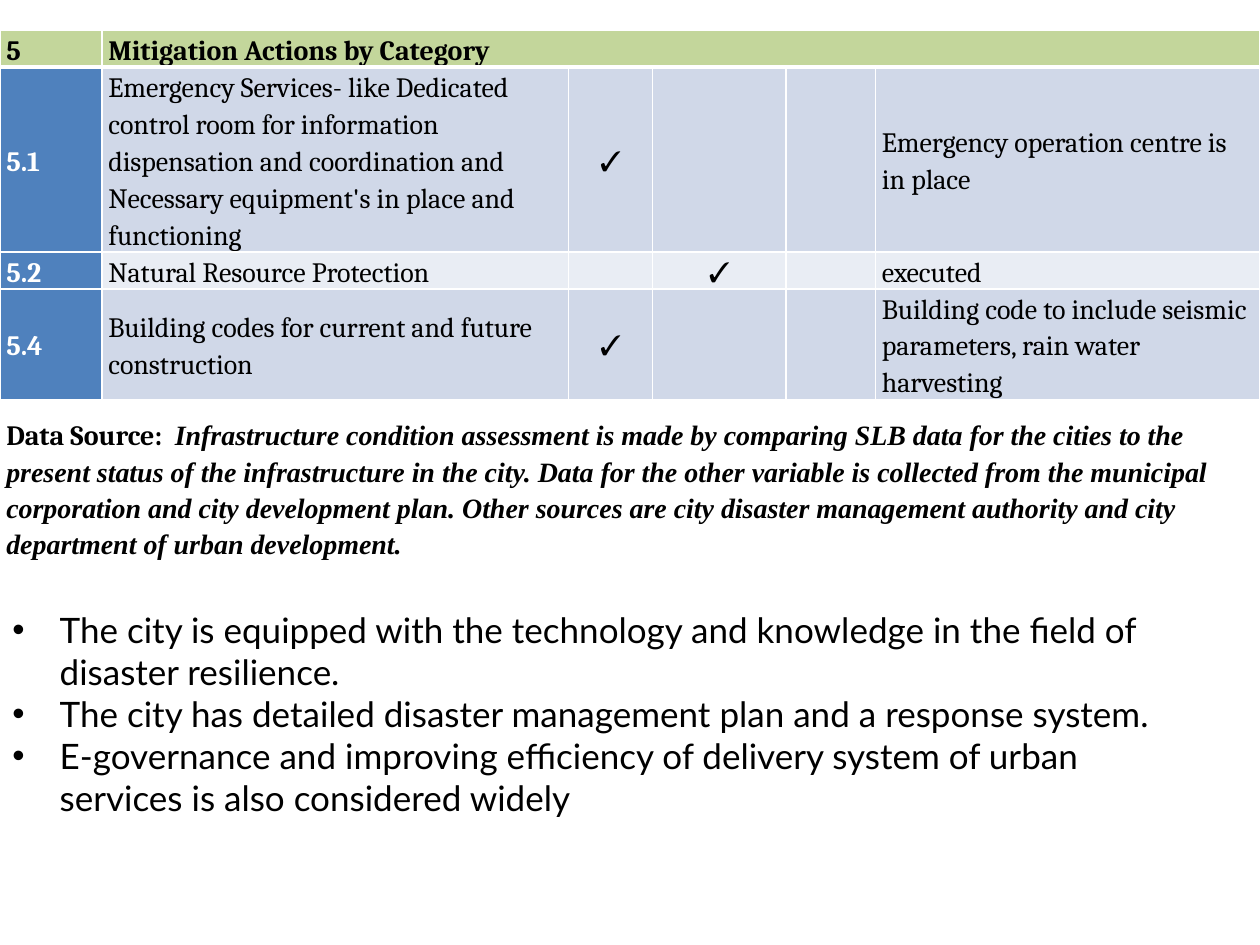
from lxml.etree import SubElement
from pptx import Presentation
from pptx.dml.color import RGBColor
from pptx.enum.text import MSO_ANCHOR, PP_ALIGN
from pptx.oxml.ns import qn
from pptx.util import Pt


class Theme:
    head = RGBColor.from_string("C3D69B")
    key = RGBColor.from_string("4F81BD")
    dark = RGBColor.from_string("D0D8E8")
    light = RGBColor.from_string("E9EDF4")
    white = RGBColor.from_string("FFFFFF")
    black = RGBColor.from_string("000000")
    serif, quote, sans = "Cambria", "Times New Roman", "Lato"
    cell, list = Pt(16), Pt(20)


def style(para, face, size, color, bold=False):
    font = para.font
    font.name, font.size, font.bold = face, size, bold
    font.color.rgb = color


def edge(cell, side, width):
    line = SubElement(cell._tc.get_or_add_tcPr(), qn("a:" + side), w=str(Pt(width)))
    fill = SubElement(line, qn("a:solidFill"))
    SubElement(fill, qn("a:srgbClr"), val=str(Theme.white))


deck = Presentation()
deck.slide_width, deck.slide_height = Pt(720), Pt(540)
slide = deck.slides.add_slide(deck.slide_layouts[6])

# Table content: one list per row, lines within a cell split by \n
tick = "✓"
rows = [
    ["5", "Mitigation Actions by Category", "", "", "", ""],
    ["5.1", "Emergency Services- like Dedicated control room for information "
     "dispensation and coordination and\n"
     "Necessary equipment's in place and functioning",
     tick, "", "", "Emergency operation centre is in place"],
    ["5.2", "Natural Resource Protection", "", tick, "", "executed"],
    ["5.4", "Building codes for current and future construction",
     tick, "", "", "Building code to include seismic parameters, rain water harvesting"],
    ["", "", "", "", "", ""],
]
source = [
    ("Data Source:  ", Theme.serif, False),
    ("Infrastructure condition assessment is made by comparing SLB data for the "
     "cities to the present status of the infrastructure in the city. Data for the "
     "other variable is collected from the municipal corporation and city "
     "development plan. Other sources are city disaster management authority and "
     "city department of urban development.", Theme.quote, True),
]
widths = [58.3, 266.5, 48.2, 76.3, 51.1, 219.6]
heights = [18.7, 98.6, 18.7, 58.3, 100.8]
last = len(rows) - 1

# Table frame
table = slide.shapes.add_table(len(rows), len(widths), Pt(0), Pt(17.2),
                               Pt(720), Pt(sum(heights))).table
table.first_row = table.horz_banding = False
for col, width in zip(table.columns, widths):
    col.width = Pt(width)
for row, height in zip(table.rows, heights):
    row.height = Pt(height)
table.cell(0, 1).merge(table.cell(0, 5))
table.cell(last, 0).merge(table.cell(last, 5))

# Table cells
for r, row in enumerate(rows):
    for c, text in enumerate(row):
        cell = table.cell(r, c)
        cell.vertical_anchor = MSO_ANCHOR.MIDDLE
        cell.margin_left = cell.margin_right = Pt(3.6)
        cell.margin_top = cell.margin_bottom = Pt(0)
        for side in ("lnL", "lnR", "lnT", "lnB"):
            thick = (r, side) in ((0, "lnB"), (1, "lnT"))
            edge(cell, side, 3 if thick else 1)
        if r == last:
            cell.fill.background()
        else:
            cell.fill.solid()
            band = Theme.dark if r % 2 else Theme.light
            cell.fill.fore_color.rgb = (
                Theme.head if r == 0 else Theme.key if c == 0 else band)
        cell.text = text
        label = c == 0 and 0 < r < last
        for para in cell.text_frame.paragraphs:
            para.line_spacing = 1.15
            if text == tick:
                para.alignment = PP_ALIGN.CENTER
            style(para, Theme.serif, Theme.cell,
                  Theme.white if label else Theme.black, c == 0 or r == 0)

# Data source note in the last row
note = table.cell(last, 0).text_frame.paragraphs[0]
for text, face, slant in source:
    run = note.add_run()
    run.text = text
    run.font.name, run.font.italic = face, slant

# Bullet list
points = [
    "The city is equipped with the technology and knowledge in the field of "
    "disaster resilience.",
    "The city has detailed disaster management plan and a response system.",
    "E-governance and improving efficiency of delivery system of urban services "
    "is also considered widely",
]
frame = slide.shapes.add_textbox(Pt(0), Pt(344.2), Pt(697.7), Pt(128.2)).text_frame
frame.word_wrap = True
frame.text = "\n".join(points)
for para in frame.paragraphs:
    props = para._p.get_or_add_pPr()
    props.set("marL", str(Pt(27)))
    props.set("indent", str(Pt(-27)))
    SubElement(props, qn("a:buFont"), typeface="Arial")
    SubElement(props, qn("a:buChar"), char="•")
    style(para, Theme.sans, Theme.list, Theme.black)

deck.save("out.pptx")
